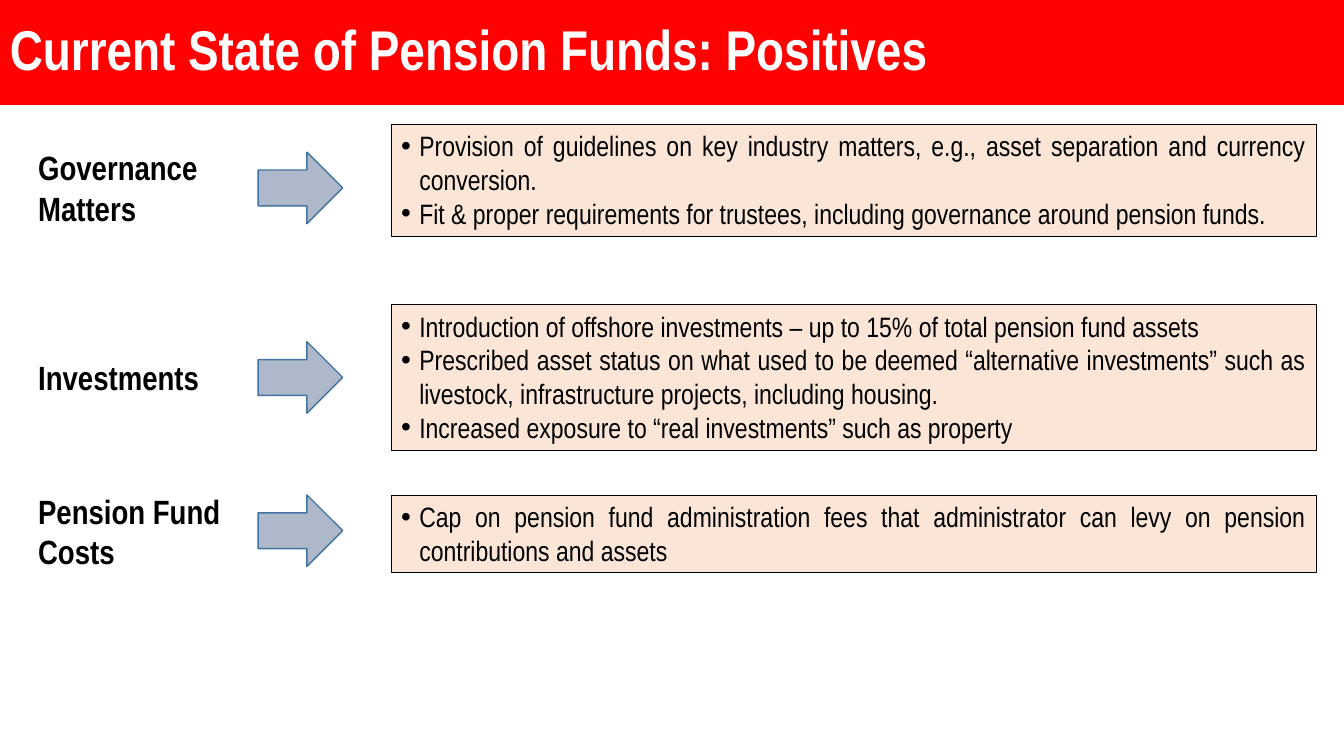
from lxml import etree
from pptx import Presentation
from pptx.dml.color import RGBColor
from pptx.enum.shapes import MSO_SHAPE
from pptx.enum.text import MSO_ANCHOR, PP_ALIGN
from pptx.oxml.ns import qn
from pptx.util import Inches, Pt

RECTANGLE, ARROW = MSO_SHAPE.RECTANGLE, MSO_SHAPE.RIGHT_ARROW
LEFT, JUSTIFY = PP_ALIGN.LEFT, PP_ALIGN.JUSTIFY
TOP, MIDDLE = MSO_ANCHOR.TOP, MSO_ANCHOR.MIDDLE

COLORS = {
    "banner": "FF0101",
    "title": "FFFFFF",
    "text": "000000",
    "panel": "FBE5D6",
    "arrow": "ADB9CA",
    "arrow_edge": "43739E",
}

TOPICS = [
    {
        "label": ("Governance Matters", 18.8, 15.45, 12.13, JUSTIFY),
        "arrow_top": 20.13,
        "panel": (16.4, 14.8),
        "points": [
            "Provision of guidelines on key industry matters, e.g., asset separation and currency conversion.",
            "Fit & proper requirements for trustees, including governance around pension funds.",
        ],
    },
    {
        "label": ("Investments", 46.53, 15.45, 6.67, JUSTIFY),
        "arrow_top": 45.2,
        "panel": (40.27, 19.33),
        "points": [
            "Introduction of offshore investments – up to 15% of total pension fund assets",
            "Prescribed asset status on what used to be deemed “alternative investments” such as "
            "livestock, infrastructure projects, including housing.",
            "Increased exposure to “real investments” such as property",
        ],
    },
    {
        "label": ("Pension Fund Costs", 64.27, 17.1, 12.13, LEFT),
        "arrow_top": 65.47,
        "panel": (65.47, 10.27),
        "points": [
            "Cap on pension fund administration fees that administrator can levy on pension "
            "contributions and assets",
        ],
    },
]


class PensionSlide:
    """Draws styled elements on one slide, with lengths in percent of its size."""

    font = "Arial Narrow"
    label_left, arrow_left, panel_left = 2.1, 19.2, 29.11
    arrow_size = 6.3, 9.47
    panel_width = 68.79
    bullet_indent = Inches(0.18)

    def __init__(self, deck):
        self.deck = deck
        self.page = deck.slides.add_slide(deck.slide_layouts[6])

    def place(self, left, top, width, height):
        across, down = self.deck.slide_width / 100, self.deck.slide_height / 100
        return [round(v) for v in (left * across, top * down, width * across, height * down)]

    def shape(self, kind, area, fill, edge=None, weight=0):
        shape = self.page.shapes.add_shape(kind, *self.place(*area))
        shape.shadow.inherit = False
        shape.fill.solid()
        shape.fill.fore_color.rgb = RGBColor.from_string(COLORS[fill])
        if edge:
            shape.line.color.rgb = RGBColor.from_string(COLORS[edge])
            shape.line.width = Pt(weight)
        else:
            shape.line.fill.background()
        return shape

    def fill_text(self, box, lines, size, color="text", bold=False, align=LEFT, anchor=TOP, bullets=False):
        frame = box.text_frame
        frame.word_wrap = True
        frame.vertical_anchor = anchor
        frame.text = "\n".join(lines)
        for para in frame.paragraphs:
            para.alignment = align
            if bullets:
                self.bullet(para)
            for span in para.runs:
                span.font.name = self.font
                span.font.size = Pt(size)
                span.font.bold = bold
                span.font.color.rgb = RGBColor.from_string(COLORS[color])

    def bullet(self, para):
        properties = para._p.get_or_add_pPr()
        properties.set("marL", str(self.bullet_indent))
        properties.set("indent", str(-self.bullet_indent))
        etree.SubElement(properties, qn("a:buFont"), typeface="Arial")
        etree.SubElement(properties, qn("a:buChar"), char="•")

    def banner(self, title):
        box = self.shape(RECTANGLE, (0, -0.13, 100, 14), "banner")
        self.fill_text(box, [title], 40, "title", bold=True, anchor=MIDDLE)
        box.text_frame.paragraphs[0].line_spacing = 0.9

    def label(self, text, top, width, height, align):
        box = self.page.shapes.add_textbox(*self.place(self.label_left, top, width, height))
        self.fill_text(box, [text], 24, bold=True, align=align)

    def arrow(self, top):
        self.shape(ARROW, (self.arrow_left, top, *self.arrow_size), "arrow", "arrow_edge", 1)

    def panel(self, top, height, points):
        area = self.panel_left, top, self.panel_width, height
        box = self.shape(RECTANGLE, area, "panel", "text", 0.25)
        self.fill_text(box, points, 20, align=JUSTIFY, bullets=True)


def main():
    deck = Presentation()
    deck.slide_width, deck.slide_height = Inches(13.33), Inches(7.5)
    slide = PensionSlide(deck)
    slide.banner("Current State of Pension Funds: Positives")
    for topic in TOPICS:
        slide.label(*topic["label"])
        slide.panel(*topic["panel"], topic["points"])
        slide.arrow(topic["arrow_top"])
    deck.save("out.pptx")


if __name__ == "__main__":
    main()
